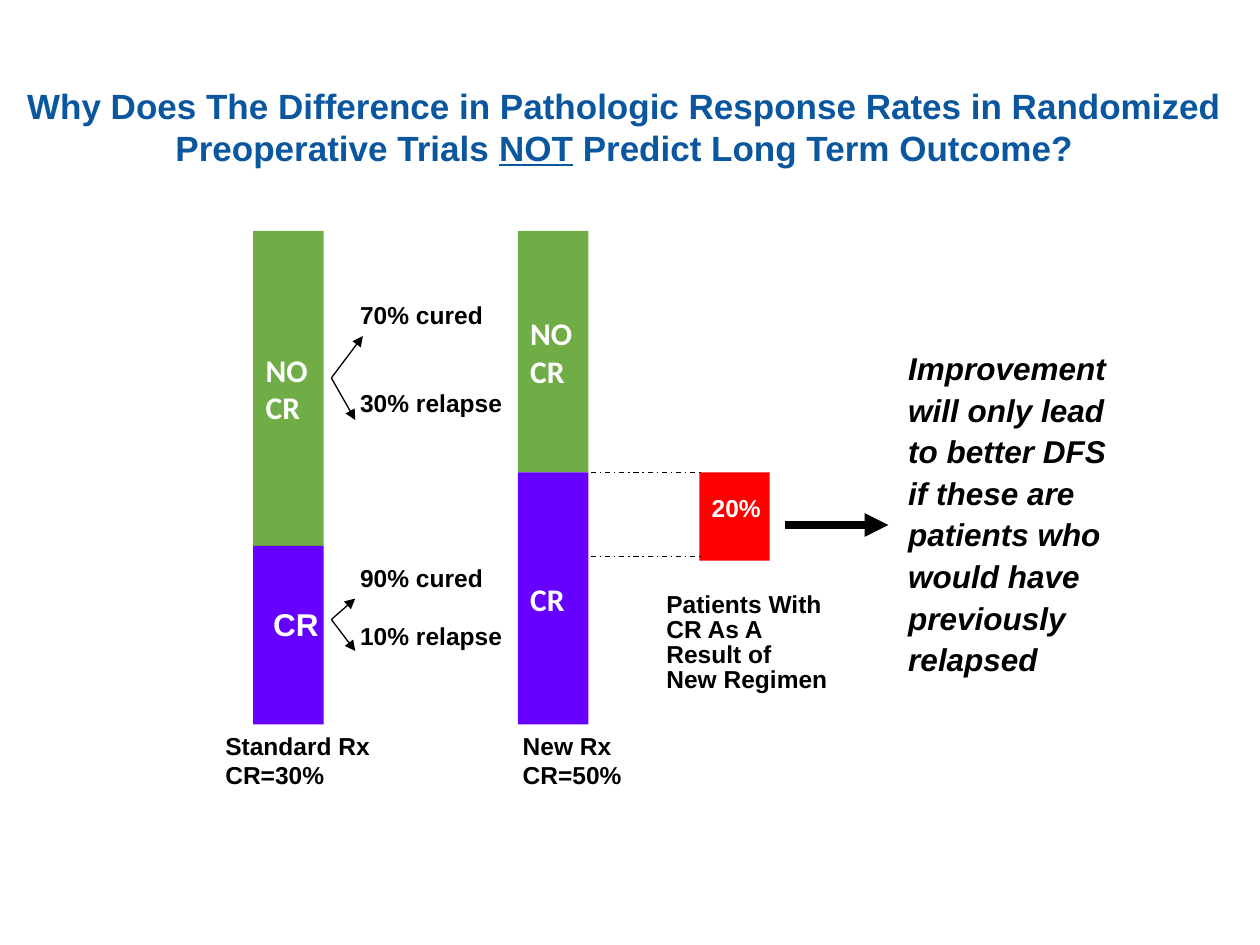
from lxml.etree import SubElement
from pptx import Presentation
from pptx.dml.color import RGBColor
from pptx.enum.dml import MSO_LINE
from pptx.enum.shapes import MSO_CONNECTOR, MSO_SHAPE
from pptx.enum.text import MSO_ANCHOR as Anchor, PP_ALIGN as Align
from pptx.oxml.ns import qn
from pptx.util import Inches, Pt

BLUE = RGBColor(0x0A, 0x56, 0x9F)
GREEN = RGBColor(0x70, 0xAD, 0x47)
PURPLE = RGBColor(0x66, 0x00, 0xFF)
RED = RGBColor(0xFF, 0x00, 0x00)
BLACK = RGBColor(0x00, 0x00, 0x00)
WHITE = RGBColor(0xFF, 0xFF, 0xFF)

deck = Presentation()
deck.slide_width, deck.slide_height = Inches(10), Inches(7.5)
page = deck.slides.add_slide(deck.slide_layouts[6])
COL = deck.slide_width / 100
ROW = deck.slide_height / 90


def grid(left, top, width, height):
    return [int(left * COL), int(top * ROW), int(width * COL), int(height * ROW)]


def write(box, lines, size=14, font="Arial", color=BLACK, italic=False, align=Align.LEFT,
          anchor=Anchor.TOP, wrap=False, spacing=None, gap=0):
    frame = box.text_frame
    frame.word_wrap = wrap
    frame.vertical_anchor = anchor
    for index, line in enumerate(lines):
        para = frame.add_paragraph() if index else frame.paragraphs[0]
        para.alignment = align
        para.line_spacing = spacing
        if index and gap:
            para.space_before = Pt(gap)
        for part, text in enumerate(line.split("_")):
            span = para.add_run()
            span.text = text
            span.font.size = Pt(size)
            span.font.name = font
            span.font.bold = True
            span.font.italic = italic
            span.font.underline = part % 2 == 1
            span.font.color.rgb = color


title = page.shapes.add_textbox(*grid(0.6, 4.6, 97.9, 14.8))
write(title, ["Why Does The Difference in Pathologic Response Rates in Randomized "
              "Preoperative Trials _NOT_ Predict Long Term Outcome?"],
      size=20, color=BLUE, align=Align.CENTER, anchor=Anchor.MIDDLE, wrap=True)

BAR_WIDTH, BAR_TOP, BAR_END = 5.6, 22, 69
STANDARD, NEW, GAIN = 20.1, 41.1, 55.5
STANDARD_SPLIT, NEW_SPLIT = 52, 45
blocks = [
    (STANDARD, BAR_TOP, STANDARD_SPLIT, GREEN, ["NO", "CR"]),
    (STANDARD, STANDARD_SPLIT, BAR_END, PURPLE, []),
    (NEW, BAR_TOP, NEW_SPLIT, GREEN, ["NO", "CR"]),
    (NEW, NEW_SPLIT, BAR_END, PURPLE, ["CR"]),
    (GAIN, NEW_SPLIT, 53.4, RED, []),
]
for left, top, end, color, lines in blocks:
    block = page.shapes.add_shape(MSO_SHAPE.RECTANGLE, *grid(left, top, BAR_WIDTH, end - top))
    block.shadow.inherit = False
    block.fill.solid()
    block.fill.fore_color.rgb = color
    block.line.fill.background()
    write(block, lines, size=18, font="Calibri", color=WHITE, anchor=Anchor.MIDDLE)

labels = [
    (20.7, 57, 5.7, 4.8, ["CR"], dict(size=18, color=WHITE)),
    (55.5, 46.4, 6, 4.1, ["20%"], dict(color=WHITE)),
    (16.9, 69, 13.7, 6.8, ["Standard Rx", "CR=30%"], {}),
    (40.5, 69, 9.9, 6.8, ["New Rx", "CR=50%"], {}),
    (27.6, 28, 13.4, 12.5, ["70% cured", "30% relapse"], dict(gap=33.5)),
    (27.6, 53, 13.4, 12.5, ["90% cured", "10% relapse"], dict(gap=16.75)),
    (51.9, 55.9, 14.9, 10.9, ["Patients With", "CR As A", "Result of", "New Regimen"],
     dict(spacing=0.85)),
    (71.1, 32.3, 18.5, 33.1,
     ["Improvement", "will only lead", "to better DFS", "if these are", "patients who",
      "would have", "previously", "relapsed"], dict(size=18, italic=True, spacing=1.1)),
]
for left, top, width, height, lines, style in labels:
    write(page.shapes.add_textbox(*grid(left, top, width, height)), lines, **style)

lines = [
    (26.3, 36, 28.8, 32, 0.75, True),
    (26.3, 36, 28.2, 40, 0.75, True),
    (26.3, 59, 28.2, 57, 0.75, True),
    (26.3, 59, 28.2, 62, 0.75, True),
    (62.3, 50, 70.5, 50, 4.5, True),
    (46.9, 45, 55.6, 45, 0.75, False),
    (46.9, 53, 55.6, 53, 0.75, False),
]
for left, top, right, bottom, weight, arrow in lines:
    line = page.shapes.add_connector(MSO_CONNECTOR.STRAIGHT, *grid(left, top, right, bottom))
    line.line.color.rgb = BLACK
    line.line.width = Pt(weight)
    if arrow:
        SubElement(line.line._get_or_add_ln(), qn("a:tailEnd"), type="triangle")
    else:
        line.line.dash_style = MSO_LINE.DASH_DOT
    SubElement(line._element.spPr, qn("a:effectLst"))

deck.save("out.pptx")
